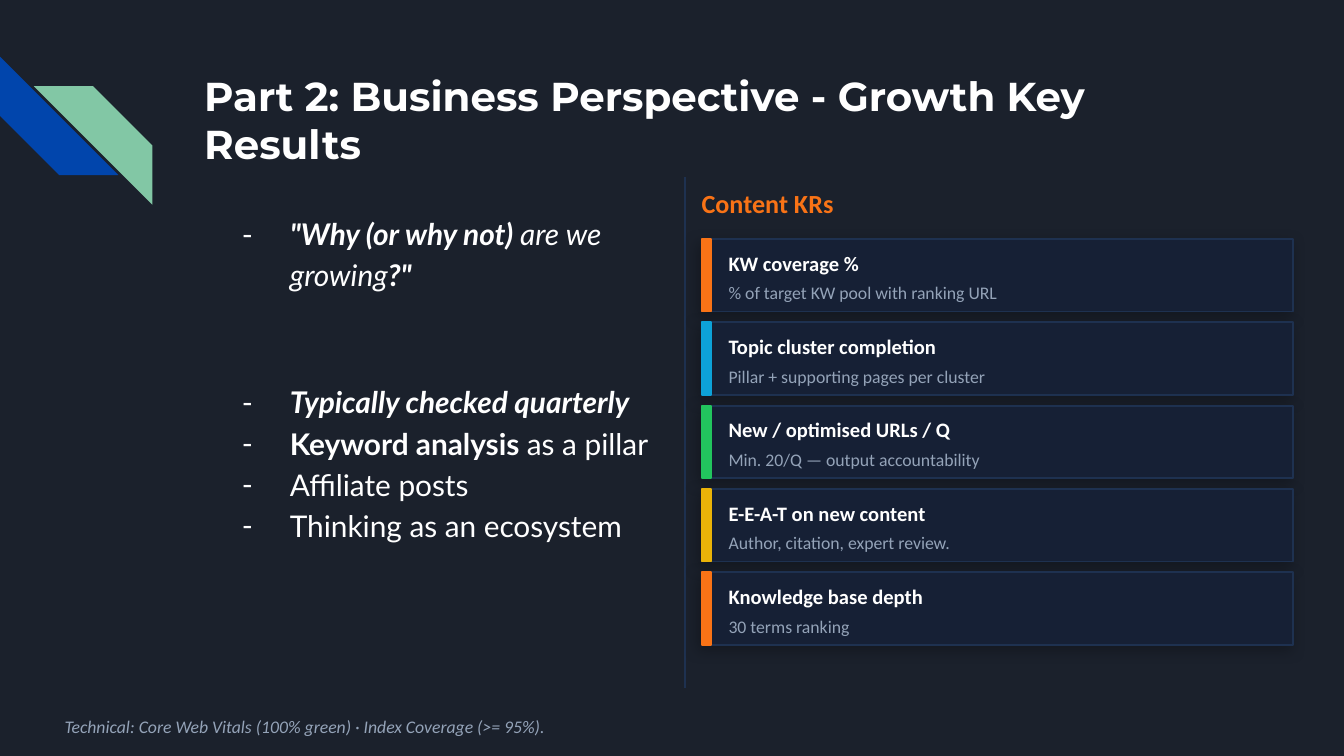
from typing import NamedTuple

from lxml.etree import SubElement
from pptx import Presentation
from pptx.dml.color import RGBColor
from pptx.enum.shapes import MSO_CONNECTOR, MSO_SHAPE
from pptx.enum.text import MSO_ANCHOR, MSO_AUTO_SIZE, PP_ALIGN
from pptx.oxml.ns import qn
from pptx.util import Cm, Pt

WHITE, GREY, ORANGE = "FFFFFF", "94A3B8", "F97316"
PANEL, EDGE = "162035", "1E3150"


class Box(NamedTuple):
    left: float
    top: float
    width: float
    height: float


class Card(NamedTuple):
    name: str
    detail: str
    color: str


class Span(NamedTuple):
    text: str
    bold: bool = False
    slant: bool = False


class Bullet(NamedTuple):
    spans: list[Span]
    before: float = 0


CARDS = [
    Card("KW coverage %", "% of target KW pool with ranking URL", ORANGE),
    Card("Topic cluster completion", "Pillar + supporting pages per cluster", "0DA2D8"),
    Card("New / optimised URLs / Q", "Min. 20/Q — output accountability", "22C55E"),
    Card("E-E-A-T on new content", "Author, citation, expert review.", "EAB308"),
    Card("Knowledge base depth", "30 terms ranking", ORANGE),
]
BULLETS = [
    Bullet([Span('"Why (or why not) ', True, True), Span("are we growing", False, True),
            Span('?"', True, True)]),
    Bullet([Span("Typically checked quarterly", True, True)], before=46),
    Bullet([Span("Keyword analysis ", True), Span("as a pillar")]),
    Bullet([Span("Affiliate posts")]),
    Bullet([Span("Thinking as an ecosystem")]),
]


def tint(code: str) -> RGBColor:
    return RGBColor.from_string(code)


def place(box: Box) -> list[Cm]:
    return [Cm(side) for side in box]


def write(para, text: str, *, size: float, color: str = WHITE, font: str = "Calibri",
          bold: bool = False, slant: bool = False) -> None:
    run = para.add_run()
    run.text = text
    face = run.font
    face.name, face.size, face.bold, face.italic = font, Pt(size), bold, slant
    face.color.rgb = tint(color)


def set_frame(frame, side: float = 0, edge: float = 0, anchor=MSO_ANCHOR.MIDDLE) -> None:
    frame.word_wrap = True
    frame.auto_size = MSO_AUTO_SIZE.NONE
    frame.vertical_anchor = anchor
    frame.margin_left = frame.margin_right = Cm(side)
    frame.margin_top = frame.margin_bottom = Cm(edge)


def add_label(slide, box: Box, text: str, side: float = 0, edge: float = 0, **style) -> None:
    frame = slide.shapes.add_textbox(*place(box)).text_frame
    set_frame(frame, side, edge)
    write(frame.paragraphs[0], text, **style)


def add_block(slide, kind: MSO_SHAPE, box: Box, fill: str, line: str | None = None):
    shape = slide.shapes.add_shape(kind, *place(box))
    shape.shadow.inherit = False
    shape.fill.solid()
    shape.fill.fore_color.rgb = tint(fill)
    if line:
        shape.line.color.rgb = tint(line)
        shape.line.width = Pt(1)
    else:
        shape.line.fill.background()
    return shape


def add_stripe(slide, box: Box, fill: str, turn: float) -> None:
    shape = add_block(slide, MSO_SHAPE.DIAGONAL_STRIPE, box, fill)
    shape.adjustments[0] = 0.5
    shape.rotation = turn


def add_shadow(shape) -> None:
    effects = shape._element.spPr.find(qn("a:effectLst"))
    shade = SubElement(effects, qn("a:outerShdw"), blurRad=str(Pt(8)), dist=str(Pt(3)),
                       dir=str(135 * 60000), algn="bl", rotWithShape="0")
    color = SubElement(shade, qn("a:srgbClr"), val="000000")
    SubElement(color, qn("a:alpha"), val="25000")


def add_rule(slide, left: float, top: float, bottom: float) -> None:
    rule = slide.shapes.add_connector(
        MSO_CONNECTOR.STRAIGHT, Cm(left), Cm(top), Cm(left), Cm(bottom))
    rule.line.color.rgb = tint(EDGE)
    rule.line.width = Pt(1)
    SubElement(rule._element.spPr, qn("a:effectLst"))


def add_card(slide, left: float, top: float, card: Card) -> None:
    panel = add_block(slide, MSO_SHAPE.RECTANGLE, Box(left, top, 11.18, 1.37), PANEL, EDGE)
    add_shadow(panel)
    add_block(slide, MSO_SHAPE.RECTANGLE, Box(left, top, 0.18, 1.37), card.color, card.color)
    add_label(slide, Box(left + 0.51, top + 0.1, 7.37, 0.71), card.name, size=11, bold=True)
    add_label(slide, Box(left + 0.51, top + 0.76, 10.41, 0.51), card.detail,
              size=9.5, color=GREY)


def add_list(slide, box: Box, items: list[Bullet]) -> None:
    frame = slide.shapes.add_textbox(*place(box)).text_frame
    set_frame(frame, 0.25, 0.25, MSO_ANCHOR.TOP)
    for place_no, item in enumerate(items):
        para = frame.add_paragraph() if place_no else frame.paragraphs[0]
        para.line_spacing = 1.15
        para.space_before = Pt(item.before)
        props = para._p.get_or_add_pPr()
        props.set("marL", str(Cm(1.27)))
        props.set("indent", str(Cm(-0.91)))
        SubElement(SubElement(props, qn("a:buClr")), qn("a:srgbClr"), val=WHITE)
        SubElement(props, qn("a:buFont"), typeface="Lato")
        SubElement(props, qn("a:buChar"), char="-")
        for span in item.spans:
            write(para, span.text, size=16, font="Lato", bold=span.bold, slant=span.slant)


def set_title(slide, box: Box, text: str) -> None:
    title = slide.shapes.title
    title.left, title.top, title.width, title.height = place(box)
    set_frame(title.text_frame, 0.25, 0.25, MSO_ANCHOR.TOP)
    para = title.text_frame.paragraphs[0]
    para.alignment = PP_ALIGN.LEFT
    write(para, text, size=21.6, font="Montserrat", bold=True)


def main() -> None:
    deck = Presentation()
    deck.slide_width, deck.slide_height = Cm(25.4), Cm(14.29)
    slide = deck.slides.add_slide(deck.slide_layouts[5])
    slide.background.fill.solid()
    slide.background.fill.fore_color.rgb = tint("1B212C")

    add_stripe(slide, Box(0, 1.07, 2.24, 2.24), "0145AC", 270)
    add_stripe(slide, Box(0.64, 1.63, 2.24, 2.24), "82C7A5", 90)
    set_title(slide, Box(3.61, 1.09, 19.56, 2.54),
              "Part 2: Business Perspective - Growth Key Results")
    add_list(slide, Box(3.96, 3.73, 8.59, 9.27), BULLETS)

    add_rule(slide, 12.95, 3.35, 13)
    left, top, pitch = 13.26, 4.52, 1.575
    add_label(slide, Box(left, 3.35, 11.18, 0.97), "Content KRs",
              size=14, color=ORANGE, bold=True)
    for row, card in enumerate(CARDS):
        add_card(slide, left, top + row * pitch, card)

    add_label(slide, Box(0.97, 13.46, 23.47, 0.56),
              "Technical: Core Web Vitals (100% green) · Index Coverage (>= 95%).",
              side=0.25, edge=0.13, size=9.5, color=GREY, slant=True)
    deck.save("out.pptx")


if __name__ == "__main__":
    main()
